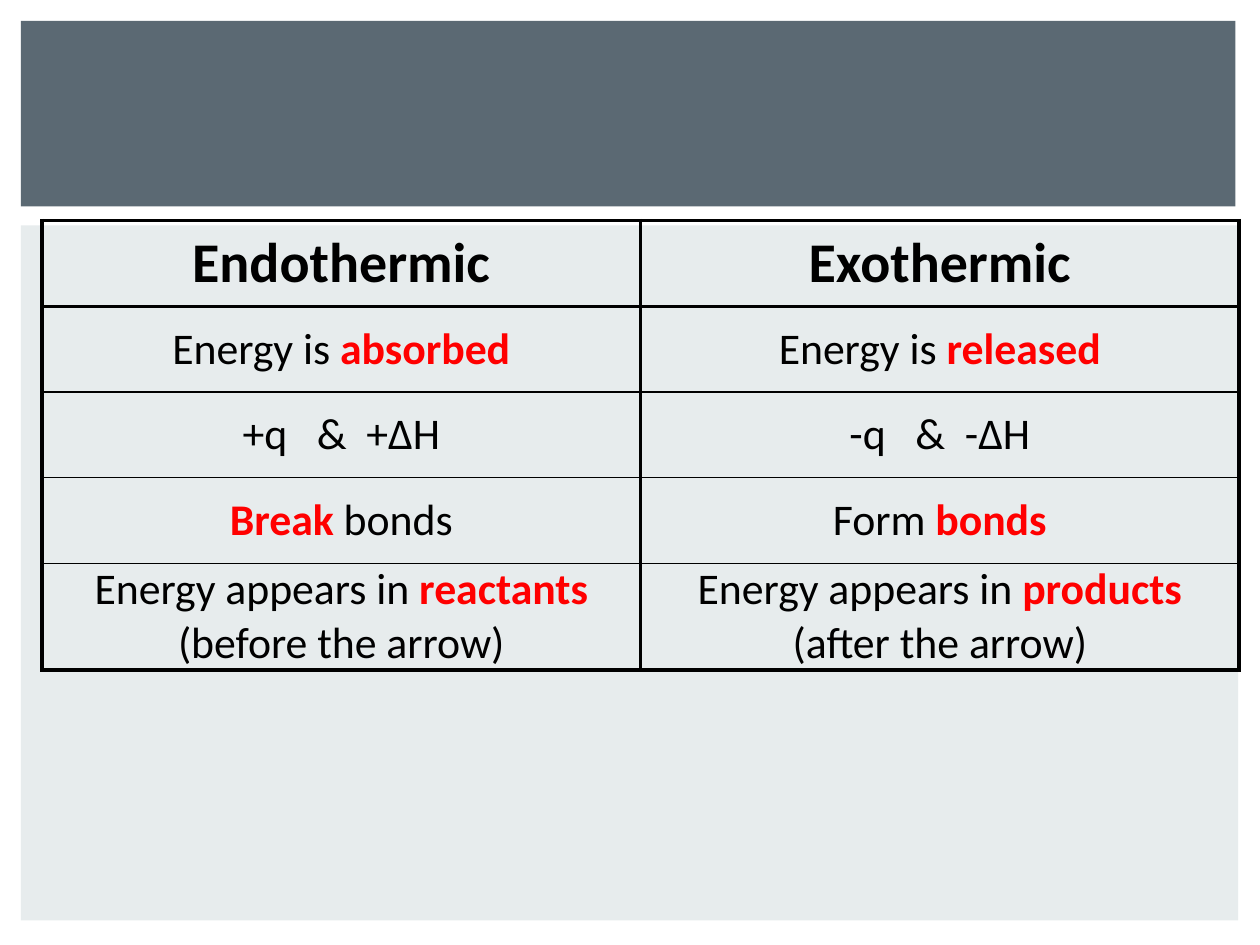
from lxml.etree import SubElement
from pptx import Presentation
from pptx.dml.color import RGBColor
from pptx.enum.shapes import MSO_SHAPE
from pptx.enum.text import MSO_ANCHOR, PP_ALIGN
from pptx.oxml.ns import qn
from pptx.util import Pt

COLORS = {"band": "5B6973", "panel": "E7ECED", "text": "000000", "key": "FF0000"}
THICK, THIN = 2.25, 1

# Each cell is a list of lines, each line a list of (text, is key word)
HEADER = [[[("Endothermic", False)]], [[("Exothermic", False)]]]
FACTS = [
    [[[("Energy is ", False), ("absorbed", True)]],
     [[("Energy is ", False), ("released", True)]]],
    [[[("+q   &  +ΔH", False)]],
     [[("-q   &  -ΔH", False)]]],
    [[[("Break ", True), ("bonds", False)]],
     [[("Form ", False), ("bonds", True)]]],
    [[[("Energy appears in ", False), ("reactants", True)],
      [("(before the arrow)", False)]],
     [[("Energy appears in ", False), ("products", True)],
      [("(after the arrow)", False)]]],
]


def add_text(paragraph, text, size=25, color="text", bold=False, font="Calibri"):
    span = paragraph.add_run()
    span.text = text
    span.font.name = font
    span.font.size = Pt(size)
    span.font.bold = bold
    span.font.color.rgb = RGBColor.from_string(COLORS[color])


class SlideBuilder:
    def __init__(self, page):
        self.page = page

    def block(self, left, top, width, height, color):
        box = self.page.shapes.add_shape(
            MSO_SHAPE.RECTANGLE, Pt(left), Pt(top), Pt(width), Pt(height))
        box.shadow.inherit = False
        box.fill.solid()
        box.fill.fore_color.rgb = RGBColor.from_string(COLORS[color])
        box.line.fill.background()

    def border(self, cell, side, width):
        properties = cell._tc.get_or_add_tcPr()
        line = SubElement(properties, qn(f"a:ln{side}"), w=str(Pt(width)))
        fill = SubElement(line, qn("a:solidFill"))
        SubElement(fill, qn("a:srgbClr"), val=COLORS["text"])

    def cell(self, cell, lines, size, bold, top, bottom):
        cell.margin_left = cell.margin_right = Pt(5)
        cell.margin_top = cell.margin_bottom = 0
        cell.vertical_anchor = MSO_ANCHOR.MIDDLE
        for side, width in zip("LRTB", (THICK, THICK, top, bottom)):
            self.border(cell, side, width)
        cell.fill.background()
        paragraph = cell.text_frame.paragraphs[0]
        paragraph.alignment = PP_ALIGN.CENTER
        for index, line in enumerate(lines):
            if index:
                paragraph.add_line_break()
            for text, is_key in line:
                add_text(paragraph, text, size=size, bold=bold or is_key,
                         color="key" if is_key else "text")

    def table(self, left, top, width, row_height, header, facts):
        rows = [header] + facts
        table = self.page.shapes.add_table(
            len(rows), len(header), Pt(left), Pt(top),
            Pt(width), Pt(row_height * len(rows))).table
        table.first_row = table.horz_banding = False
        last = len(rows) - 1
        for r, row in enumerate(rows):
            for c, lines in enumerate(row):
                # Heavy rules frame the table and sit under the header
                self.cell(table.cell(r, c), lines,
                          size=25 if r else 32, bold=r == 0,
                          top=THICK if r < 2 else THIN,
                          bottom=THICK if r in (0, last) else THIN)


def main():
    deck = Presentation()
    deck.slide_width, deck.slide_height = Pt(720), Pt(540)
    builder = SlideBuilder(deck.slides.add_slide(deck.slide_layouts[6]))

    # Background panel and title band
    builder.block(12, 128.75, 695.5, 397.25, "panel")
    builder.block(12, 12, 694, 106, "band")

    # Comparison table
    builder.table(24, 126, 684, 49, HEADER, FACTS)

    deck.save("out.pptx")


if __name__ == "__main__":
    main()
